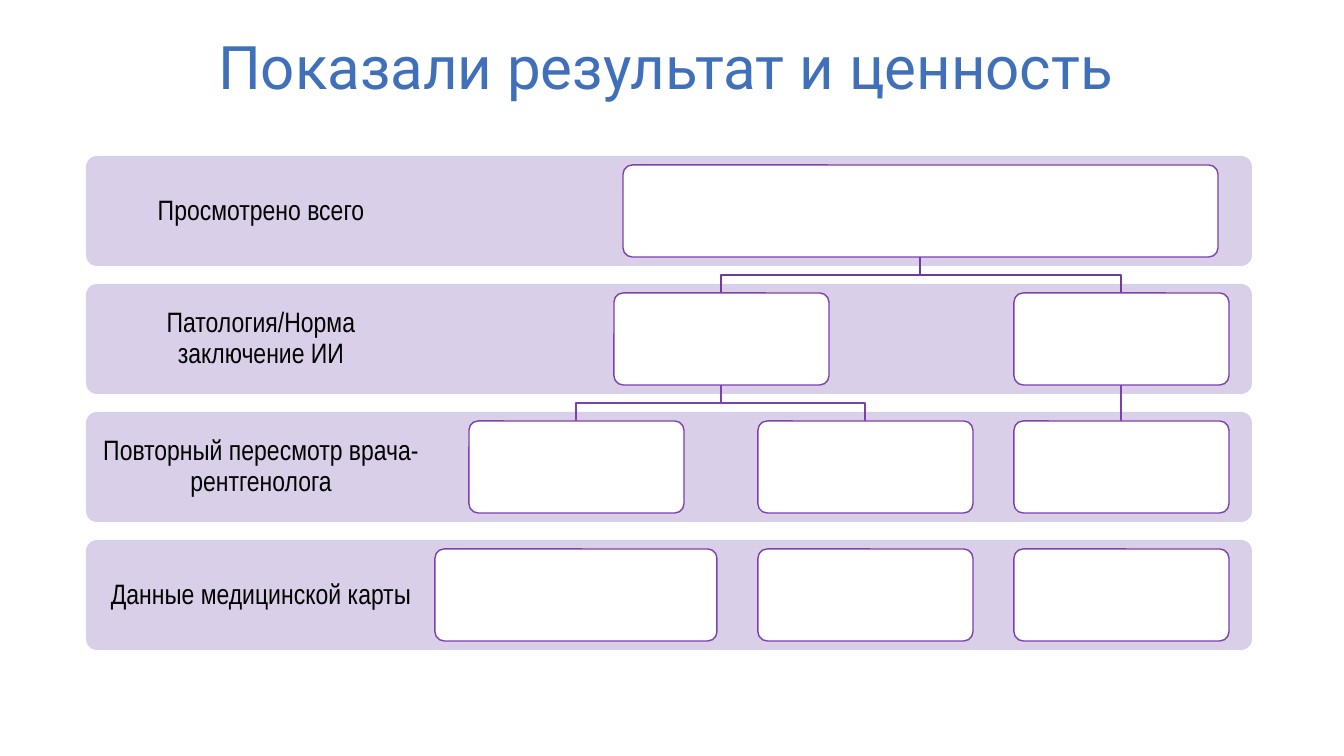
import dataclasses

import pptx
import pptx.dml.color
import pptx.enum.shapes
import pptx.enum.text
import pptx.util

EMU_PER_PX = 914400 / 100.8
ROW_TOP, ROW_PITCH, ROW_HEIGHT = 156, 128, 110
ROW_LEFT, ROW_WIDTH, LABEL_WIDTH = 86, 1166, 350
LABEL_INSET = 16
CELL_INSET, CELL_HEIGHT, CELL_WIDTH = 9, 92, 215

ROW_LABELS = [
    "Просмотрено всего",
    "Патология/Норма заключение ИИ",
    "Повторный пересмотр врача-рентгенолога",
    "Данные медицинской карты",
]
# Left edge and width of each cell, row by row.
ROW_CELLS = [
    [(623, 595)],
    [(614, CELL_WIDTH), (1014, CELL_WIDTH)],
    [(469, CELL_WIDTH), (758, CELL_WIDTH), (1014, CELL_WIDTH)],
    [(435, 282), (758, CELL_WIDTH), (1014, CELL_WIDTH)],
]
# Parent row, parent cell, child cell in the next row.
BRANCHES = [(0, 0, 0), (0, 0, 1), (1, 0, 0), (1, 0, 1), (1, 1, 2)]


def rgb(code):
    return pptx.dml.color.RGBColor.from_string(code)


@dataclasses.dataclass(frozen=True)
class Theme:
    title_color: object = rgb("4170BA")
    label_color: object = rgb("000000")
    row_fill: object = rgb("DACFE8")
    cell_fill: object = rgb("FFFFFF")
    cell_line: object = rgb("7D41AC")
    branch_lines: tuple = (rgb("6F3A98"), rgb("7D41AC"))
    line_width: object = pptx.util.Pt(1)
    title_font: str = "Roboto"
    title_size: object = pptx.util.Pt(42.9)
    label_font: str = "Arial Narrow"
    label_size: object = pptx.util.Pt(20)


THEME = Theme()


def px(length):
    return pptx.util.Emu(round(length * EMU_PER_PX))


def row_top(row):
    return ROW_TOP + row * ROW_PITCH


def cell_center(row, cell):
    left, width = ROW_CELLS[row][cell]
    return left + width // 2


def add_text(page, text, left, top, width, height, font, size, color):
    """Add a centred text box and return its text frame."""
    box = page.shapes.add_textbox(px(left), px(top), px(width), px(height))
    frame = box.text_frame
    frame.word_wrap = True
    para = frame.paragraphs[0]
    para.alignment = pptx.enum.text.PP_ALIGN.CENTER
    para.line_spacing = 0.9
    span = para.add_run()
    span.text = text
    span.font.name = font
    span.font.size = size
    span.font.color.rgb = color
    return frame


def add_rounded(page, left, top, width, height, fill, line=None):
    box = page.shapes.add_shape(
        pptx.enum.shapes.MSO_SHAPE.ROUNDED_RECTANGLE,
        px(left), px(top), px(width), px(height))
    box.adjustments[0] = 0.1
    box.shadow.inherit = False
    box.fill.solid()
    box.fill.fore_color.rgb = fill
    if line is None:
        box.line.fill.background()
    else:
        box.line.color.rgb = line
        box.line.width = THEME.line_width


def add_row(page, row, label):
    top = row_top(row)
    add_rounded(page, ROW_LEFT, top, ROW_WIDTH, ROW_HEIGHT, THEME.row_fill)
    frame = add_text(page, label, ROW_LEFT, top, LABEL_WIDTH, ROW_HEIGHT,
                     THEME.label_font, THEME.label_size, THEME.label_color)
    frame.vertical_anchor = pptx.enum.text.MSO_ANCHOR.MIDDLE
    frame.margin_left = frame.margin_right = px(LABEL_INSET)
    frame.margin_top = frame.margin_bottom = px(LABEL_INSET)


def add_branch(page, row, parent, child):
    """Draw the stepped line from a cell down to a cell of the next row."""
    start_x, end_x = cell_center(row, parent), cell_center(row + 1, child)
    start_y = row_top(row) + CELL_INSET + CELL_HEIGHT
    end_y = row_top(row + 1) + CELL_INSET
    if start_x == end_x:
        branch = page.shapes.add_connector(
            pptx.enum.shapes.MSO_CONNECTOR.STRAIGHT,
            px(start_x), px(start_y), px(end_x), px(end_y))
        branch._element.spPr.get_or_add_ln()
        branch._element.spPr.append(
            pptx.oxml.parse_xml(
                '<a:effectLst xmlns:a="http://schemas.openxmlformats.org/drawingml/2006/main"/>'))
    else:
        middle_y = (start_y + end_y) // 2
        outline = page.shapes.build_freeform(start_x, start_y, EMU_PER_PX)
        outline.add_line_segments(
            [(start_x, middle_y), (end_x, middle_y), (end_x, end_y)], close=False)
        branch = outline.convert_to_shape()
        branch.shadow.inherit = False
        branch.fill.background()
    branch.line.color.rgb = THEME.branch_lines[row]
    branch.line.width = THEME.line_width


def main():
    deck = pptx.Presentation()
    deck.slide_width, deck.slide_height = px(1344), px(756)
    page = deck.slides.add_slide(deck.slide_layouts[6])

    add_text(page, "Показали результат и ценность", 86, 33, 1159, 77,
             THEME.title_font, THEME.title_size, THEME.title_color)
    for row, label in enumerate(ROW_LABELS):
        add_row(page, row, label)
    for branch in BRANCHES:
        add_branch(page, *branch)
    for row, cells in enumerate(ROW_CELLS):
        for left, width in cells:
            add_rounded(page, left, row_top(row) + CELL_INSET, width, CELL_HEIGHT,
                        THEME.cell_fill, THEME.cell_line)
    deck.save("out.pptx")


if __name__ == "__main__":
    main()
